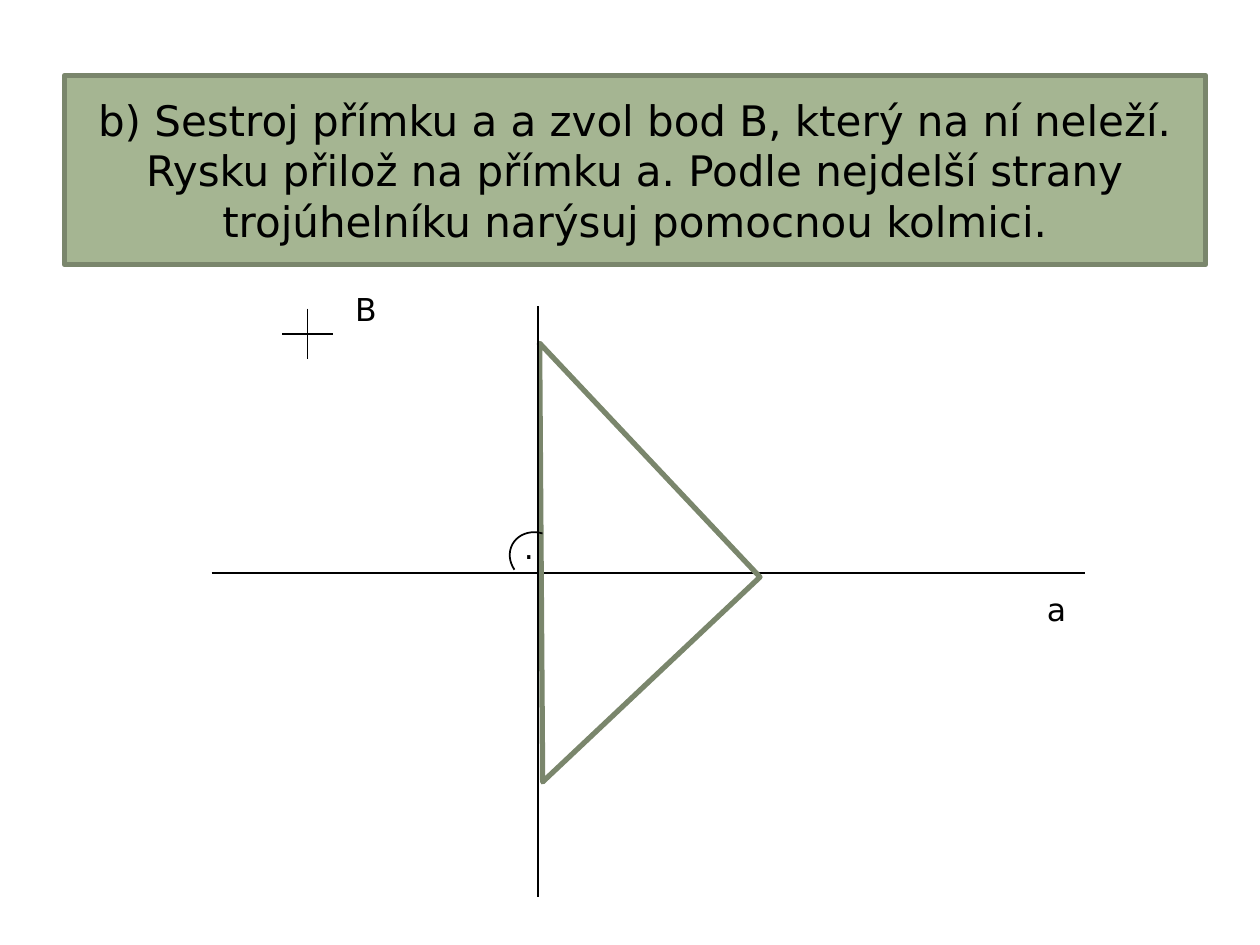
import pptx
import pptx.dml.color
import pptx.enum.shapes
import pptx.enum.text
import pptx.oxml.ns
import pptx.util
from lxml import etree

Inches = pptx.util.Inches
Shape = pptx.enum.shapes.MSO_SHAPE
BLACK = "000000"
SAGE = "A5B592"
DARK_SAGE = "7A866C"


def color(hex_value):
    return pptx.dml.color.RGBColor.from_string(hex_value)


def write(frame, text, size=18, font="DejaVu Sans", ink=BLACK, align=None):
    paragraph = frame.paragraphs[0]
    paragraph.alignment = align
    run = paragraph.add_run()
    run.text = text
    run.font.size = pptx.util.Pt(size)
    run.font.name = font
    run.font.color.rgb = color(ink)


class Drawing:
    def __init__(self, slide, thin=1, thick=3):
        self.slide = slide
        self.thin = thin
        self.thick = thick

    def outline(self, line, ink, width):
        line.color.rgb = color(ink)
        line.width = pptx.util.Pt(width)

    def heading(self, text, left, top, width, height):
        title = self.slide.shapes.title
        title.left, title.top = Inches(left), Inches(top)
        title.width, title.height = Inches(width), Inches(height)
        title.fill.solid()
        title.fill.fore_color.rgb = color(SAGE)
        self.outline(title.line, DARK_SAGE, self.thick)
        frame = title.text_frame
        frame.word_wrap = True
        frame.auto_size = pptx.enum.text.MSO_AUTO_SIZE.NONE
        frame.vertical_anchor = pptx.enum.text.MSO_ANCHOR.MIDDLE
        write(frame, text, size=24, align=pptx.enum.text.PP_ALIGN.CENTER)

    def segment(self, x1, y1, x2, y2):
        connector = self.slide.shapes.add_connector(
            pptx.enum.shapes.MSO_CONNECTOR.STRAIGHT,
            Inches(x1), Inches(y1), Inches(x2), Inches(y2))
        self.outline(connector.line, BLACK, self.thin)
        etree.SubElement(connector.element.spPr, pptx.oxml.ns.qn("a:effectLst"))

    def figure(self, kind, left, top, width, height, rotation, ink, weight):
        shape = self.slide.shapes.add_shape(
            kind, Inches(left), Inches(top), Inches(width), Inches(height))
        shape.rotation = rotation
        shape.shadow.inherit = False
        shape.fill.background()
        self.outline(shape.line, ink, weight)
        return shape

    def set_square(self, left, top, width, height, rotation):
        self.figure(Shape.RIGHT_TRIANGLE, left, top, width, height,
                    rotation, DARK_SAGE, self.thick)

    def angle_mark(self, left, top, width, height, rotation, start, end):
        arc = self.figure(Shape.ARC, left, top, width, height,
                          rotation, BLACK, self.thin)
        arc.adjustments[0] = start
        arc.adjustments[1] = end
        arc.element.spPr.find(pptx.oxml.ns.qn("a:xfrm")).set("flipV", "1")

    def label(self, text, left, top, width, height=0.4):
        box = self.slide.shapes.add_textbox(
            Inches(left), Inches(top), Inches(width), Inches(height))
        box.text_frame.word_wrap = True
        box.text_frame.auto_size = pptx.enum.text.MSO_AUTO_SIZE.SHAPE_TO_FIT_TEXT
        write(box.text_frame, text)


def main():
    deck = pptx.Presentation()
    deck.slide_width, deck.slide_height = Inches(10), Inches(7.5)
    drawing = Drawing(deck.slides.add_slide(deck.slide_layouts[5]))

    drawing.heading(
        "b) Sestroj přímku a a zvol bod B, který na ní neleží. "
        "Rysku přilož na přímku a. Podle nejdelší strany "
        "trojúhelníku narýsuj pomocnou kolmici.", 0.51, 0.6, 9.06, 1.5)

    drawing.segment(1.68, 4.55, 8.61, 4.55)
    drawing.label("a", 8.21, 4.63, 0.63)

    drawing.set_square(3.02, 3.28, 2.55, 2.37, rotation=226.7)
    drawing.segment(4.27, 2.43, 4.27, 7.12)

    point_x, point_y, arm = 2.44, 2.65, 0.2
    drawing.segment(point_x, point_y - arm, point_x, point_y + arm)
    drawing.segment(point_x - arm, point_y, point_x + arm, point_y)
    drawing.label("B", 2.72, 2.25, 0.39)

    drawing.angle_mark(4.04, 4.23, 0.44, 0.39, rotation=208.6,
                       start=171.15, end=34.29)
    drawing.label(".", 4.06, 4.14, 0.31)

    deck.save("out.pptx")


if __name__ == "__main__":
    main()
